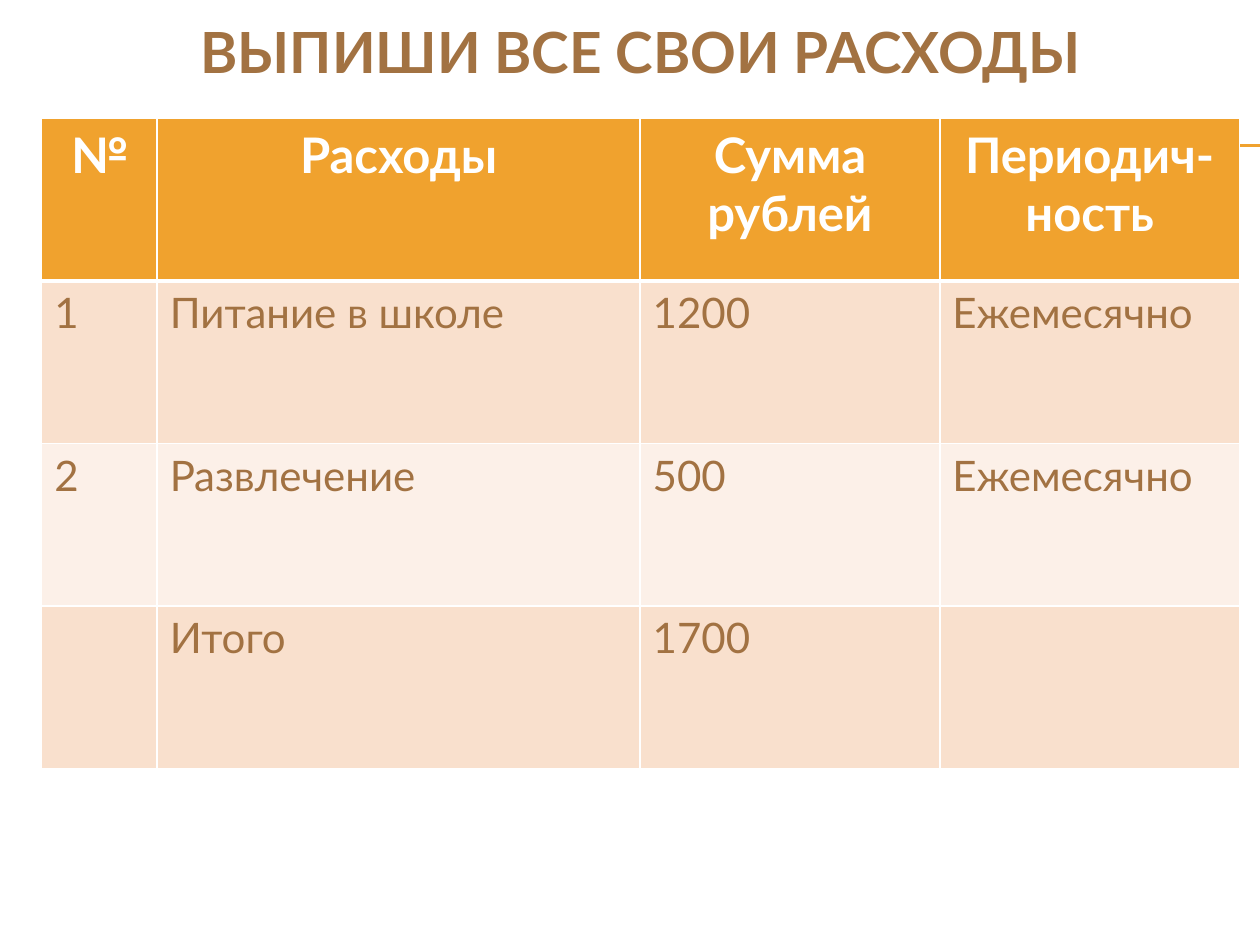
from typing import NamedTuple

from lxml.etree import SubElement
from pptx import Presentation
from pptx.dml.color import RGBColor
from pptx.enum.shapes import MSO_CONNECTOR as Connector
from pptx.enum.text import MSO_ANCHOR as Anchor, PP_ALIGN as Align
from pptx.oxml.ns import qn
from pptx.util import Pt

FONT = "Lato"
COLORS = {
    "accent": "F0A22E",
    "text": "A27242",
    "white": "FFFFFF",
    "odd_row": "F9E0CD",
    "even_row": "FCF0E8",
}
LEFT, WIDTH = 23.8, 684.5
TABLE_TOP, ROW_HEIGHT = 67.7, 92.9
COLUMN_WIDTHS = (66, 276, 171.25, 171.25)
RULE_LEFT, SLIDE_WIDTH = 40.3, 720
RULE_HEIGHTS = (82.8, 83.5)


class RowStyle(NamedTuple):
    fill: str
    color: str
    size: float
    bold: bool
    align: Align
    top_border: float
    bottom_border: float


HEADER = RowStyle("accent", "white", 28, True, Align.CENTER, 1, 3)
FIRST = RowStyle("odd_row", "text", 24, False, Align.LEFT, 3, 1)
EVEN = RowStyle("even_row", "text", 24, False, Align.LEFT, 1, 1)
ODD = RowStyle("odd_row", "text", 24, False, Align.LEFT, 1, 1)

EXPENSES = (
    (HEADER, ("№", "Расходы", "Сумма рублей", "Периодич-ность")),
    (FIRST, ("1", "Питание в школе", "1200", "Ежемесячно")),
    (EVEN, ("2", "Развлечение", "500", "Ежемесячно")),
    (ODD, ("", "Итого", "1700", "")),
)


def rgb(name: str) -> RGBColor:
    return RGBColor.from_string(COLORS[name])


def style_paragraph(paragraph, size: float, color: str, bold: bool, align: Align) -> None:
    paragraph.alignment = align
    font = paragraph.font
    font.name, font.size, font.bold = FONT, Pt(size), bold
    font.color.rgb = rgb(color)


def add_rule(slide, y: float) -> None:
    rule = slide.shapes.add_connector(
        Connector.STRAIGHT, Pt(RULE_LEFT), Pt(y), Pt(SLIDE_WIDTH), Pt(y)
    )
    rule.line.color.rgb = rgb("accent")
    rule.line.width = Pt(0.75)
    SubElement(rule._element.spPr, qn("a:effectLst"))


def add_title(slide, title: str) -> None:
    box = slide.shapes.add_textbox(Pt(LEFT), Pt(9), Pt(WIDTH), Pt(39.6))
    frame = box.text_frame
    frame.word_wrap = True
    frame.vertical_anchor = Anchor.MIDDLE
    frame.text = title
    style_paragraph(frame.paragraphs[0], 32.4, "text", True, Align.CENTER)


def add_borders(cell, top: float, bottom: float) -> None:
    """Draw white borders; call before filling, as the schema wants lines first."""
    properties = cell._tc.get_or_add_tcPr()
    for side, width in (("L", 1), ("R", 1), ("T", top), ("B", bottom)):
        border = SubElement(properties, qn(f"a:ln{side}"), w=str(Pt(width)))
        fill = SubElement(border, qn("a:solidFill"))
        SubElement(fill, qn("a:srgbClr"), val=COLORS["white"])


def fill_cell(cell, text: str, style: RowStyle) -> None:
    add_borders(cell, style.top_border, style.bottom_border)
    cell.fill.solid()
    cell.fill.fore_color.rgb = rgb(style.fill)
    cell.text = text
    style_paragraph(
        cell.text_frame.paragraphs[0], style.size, style.color, style.bold, style.align
    )


def add_expenses(slide) -> None:
    table = slide.shapes.add_table(
        len(EXPENSES), len(COLUMN_WIDTHS),
        Pt(LEFT), Pt(TABLE_TOP), Pt(WIDTH), Pt(ROW_HEIGHT * len(EXPENSES)),
    ).table
    for column, width in zip(table.columns, COLUMN_WIDTHS):
        column.width = Pt(width)
    for row, (style, texts) in zip(table.rows, EXPENSES):
        row.height = Pt(ROW_HEIGHT)
        for cell, text in zip(row.cells, texts):
            fill_cell(cell, text, style)


def main() -> None:
    deck = Presentation()
    deck.slide_width, deck.slide_height = Pt(SLIDE_WIDTH), Pt(540)
    slide = deck.slides.add_slide(deck.slide_layouts[6])
    for y in RULE_HEIGHTS:
        add_rule(slide, y)
    add_title(slide, "ВЫПИШИ ВСЕ СВОИ РАСХОДЫ")
    add_expenses(slide)
    deck.save("out.pptx")


if __name__ == "__main__":
    main()
